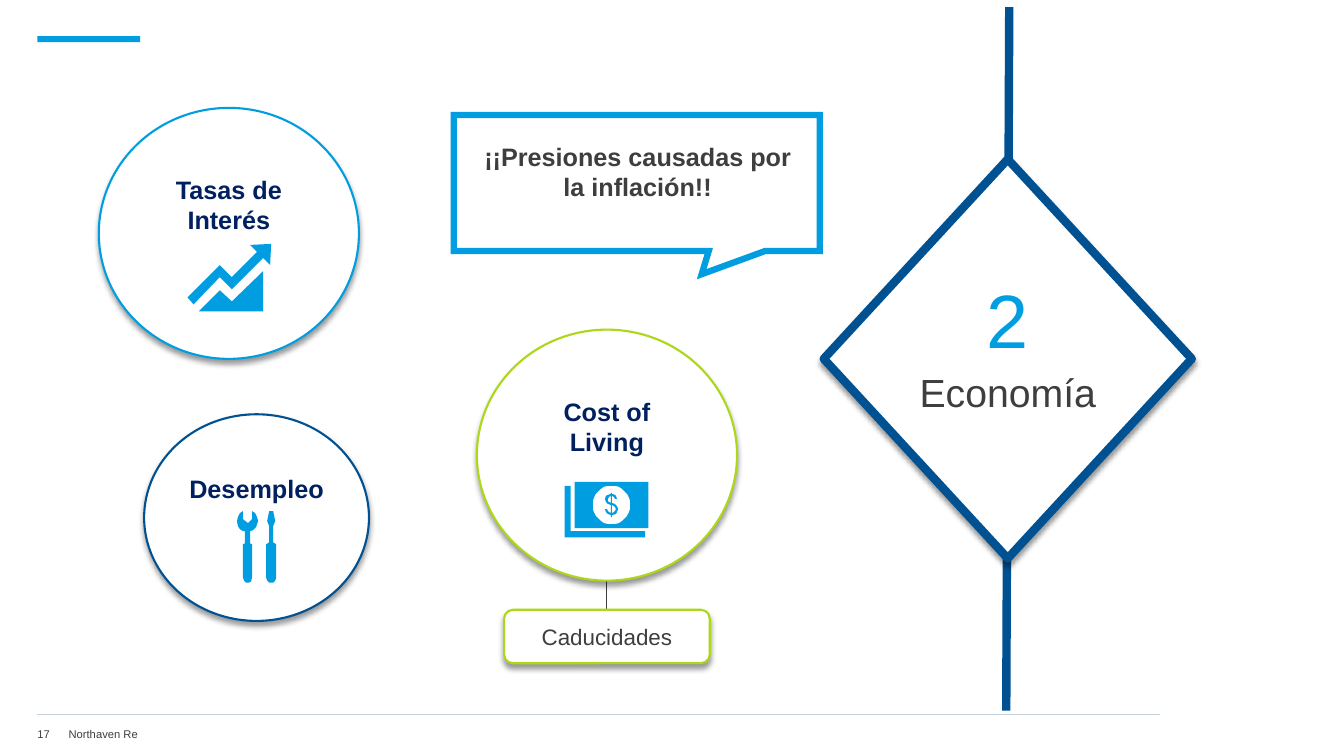
from math import cos, pi, sin

from lxml.etree import SubElement
from pptx import Presentation
from pptx.dml.color import RGBColor
from pptx.enum.shapes import MSO_CONNECTOR as Connector, MSO_SHAPE as Preset
from pptx.enum.text import MSO_ANCHOR as Anchor, PP_ALIGN as Align
from pptx.oxml.ns import qn
from pptx.util import Pt

PX = 9144
SKY, NAVY, LIME = "009EE0", "005192", "ACD819"
INK, HEADING, WHITE = "3E3E3E", "002060", "FFFFFF"


def paint(shape, fill=None, line=None, weight=1.5, shadow=False):
    if fill:
        shape.fill.solid()
        shape.fill.fore_color.rgb = RGBColor.from_string(fill)
    else:
        shape.fill.background()
    if line:
        shape.line.color.rgb = RGBColor.from_string(line)
        shape.line.width = Pt(weight)
    else:
        shape.line.fill.background()
    shape.shadow.inherit = False
    if shadow:
        effects = shape._element.spPr.find(qn("a:effectLst"))
        outer = SubElement(effects, qn("a:outerShdw"), blurRad="50800", dist="38100",
                           dir="5400000", algn="t", rotWithShape="0")
        black = SubElement(outer, qn("a:srgbClr"), val="000000")
        SubElement(black, qn("a:alpha"), val="40000")


def write(shape, lines, insets, anchor=Anchor.MIDDLE, align=Align.CENTER):
    frame = shape.text_frame
    frame.word_wrap = True
    frame.vertical_anchor = anchor
    (frame.margin_left, frame.margin_top,
     frame.margin_right, frame.margin_bottom) = [value * PX for value in insets]
    for index, (text, size, color, bold) in enumerate(lines):
        para = frame.add_paragraph() if index else frame.paragraphs[0]
        para.text = text
        para.alignment = align
        if index:
            para.space_before = Pt(3)
        para.font.name = "Arial"
        para.font.size = Pt(size)
        para.font.bold = bold
        para.font.color.rgb = RGBColor.from_string(color)


deck = Presentation()
deck.slide_width, deck.slide_height = 1333 * PX, 750 * PX
page = deck.slides.add_slide(deck.slide_layouts[6])
shapes = page.shapes

for x1, y1, x2, y2, color, weight in [
    (37, 709, 1151, 709, "C6D2D9", 0.75),
    (1001, 7, 998, 705, NAVY, 6),
    (602, 576, 602, 605, INK, 0.75),
]:
    rule = shapes.add_connector(Connector.STRAIGHT, x1 * PX, y1 * PX, x2 * PX, y2 * PX)
    rule.line.color.rgb = RGBColor.from_string(color)
    rule.line.width = Pt(weight)
    SubElement(rule._element.spPr, qn("a:effectLst"))

for left, width, text in [(37, 31, "17"), (68, 1078, "Northaven Re")]:
    footer = shapes.add_textbox(left * PX, 716 * PX, width * PX, 24 * PX)
    write(footer, [(text, 8, INK, False)], (0, 0, 0, 0), align=Align.LEFT)

accent = shapes.add_shape(Preset.RECTANGLE, 37 * PX, 36 * PX, 102 * PX, 6 * PX)
paint(accent, SKY)

diamond = shapes.add_shape(Preset.FLOWCHART_DECISION, 817 * PX, 158 * PX, 365 * PX, 396 * PX)
paint(diamond, WHITE, NAVY, 6, shadow=True)
topic = shapes.add_textbox(882 * PX, 271 * PX, 235 * PX, 122 * PX)
write(topic, [("2", 54, SKY, False), ("Economía", 28, INK, False)], (0, 0, 0, 0), Anchor.TOP)

for left, top, width, height, color, text in [
    (98, 107, 258, 249, SKY, "Tasas de Interés"),
    (473, 327, 258, 249, LIME, "Cost of Living"),
    (143, 411, 223, 205, NAVY, "Desempleo"),
]:
    bubble = shapes.add_shape(Preset.OVAL, left * PX, top * PX, width * PX, height * PX)
    paint(bubble, WHITE, color, shadow=True)
    write(bubble, [(text, 18, HEADING, True)], (10, 5, 10, 62))

lapses = shapes.add_shape(Preset.ROUNDED_RECTANGLE, 500 * PX, 605 * PX, 204 * PX, 53 * PX)
paint(lapses, WHITE, LIME, shadow=True)
write(lapses, [("Caducidades", 16, INK, False)], (10, 5, 10, 5))

coin = [(round(606.5 + 18.5 * cos(step * pi / 16)), round(501 + 19 * sin(step * pi / 16)))
        for step in range(32)]
banknote = [[(570, 478), (570, 524), (643, 524), (643, 478)], coin]
banknote_behind = [[(640, 533), (560, 533), (560, 482), (566, 482), (566, 527), (640, 527)]]
dollar = [
    [(606, 513), (606, 511), (603, 510), (601, 508), (600, 505), (602, 505), (603, 507),
     (604, 508), (606, 509), (606, 501), (603, 500), (601, 498), (600, 495), (601, 492),
     (603, 491), (606, 490), (606, 489), (607, 489), (607, 490), (610, 491), (611, 492),
     (612, 495), (610, 495), (609, 493), (607, 492), (607, 499), (610, 500), (612, 502),
     (613, 505), (612, 508), (611, 510), (607, 511), (607, 513)],
    [(606, 492), (604, 493), (603, 495), (603, 497), (604, 498), (606, 499)],
    [(607, 509), (609, 508), (610, 507), (611, 505), (610, 503), (609, 502), (607, 501)],
]
trend_arrow = [[(269, 242), (248, 243), (255, 250), (230, 275), (218, 263), (186, 295),
                (192, 302), (218, 275), (230, 287), (261, 256), (268, 263)]]
trend_area = [[(218, 288), (197, 309), (261, 309), (261, 269), (230, 299)]]
screwdriver = [[(274, 540), (271, 538), (271, 522), (273, 517), (271, 507), (267, 507),
                (265, 517), (267, 522), (267, 538), (264, 540), (264, 573), (265, 576),
                (267, 578), (271, 578), (273, 576), (274, 573)]]
wrench = [[(250, 507), (250, 515), (246, 519), (241, 515), (241, 507), (238, 509), (236, 513),
           (235, 517), (236, 522), (238, 525), (241, 527), (243, 527), (243, 539), (241, 540),
           (241, 573), (242, 576), (244, 578), (247, 578), (249, 577), (250, 573), (250, 540),
           (248, 539), (248, 527), (251, 526), (254, 523), (256, 517), (255, 513), (253, 509)]]
callout = [[(813, 114), (450, 114), (450, 249), (703, 249), (696, 272), (759, 249), (813, 249)]]

for contours in [banknote, banknote_behind, dollar, trend_arrow, trend_area,
                 screwdriver, wrench, callout]:
    builder = shapes.build_freeform(*contours[0][0], scale=PX)
    for index, contour in enumerate(contours):
        if index:
            builder.move_to(*contour[0])
        builder.add_line_segments(contour[1:], close=True)
    outline = builder.convert_to_shape()
    if contours is callout:
        paint(outline, None, SKY, 4.5)
        SubElement(outline.line._get_or_add_ln(), qn("a:miter"), lim="800000")
        write(outline, [("¡¡Presiones causadas por la inflación!!", 18, INK, True)],
              (28, 26, 26, 24), Anchor.TOP)
    else:
        paint(outline, SKY)

deck.save("out.pptx")
